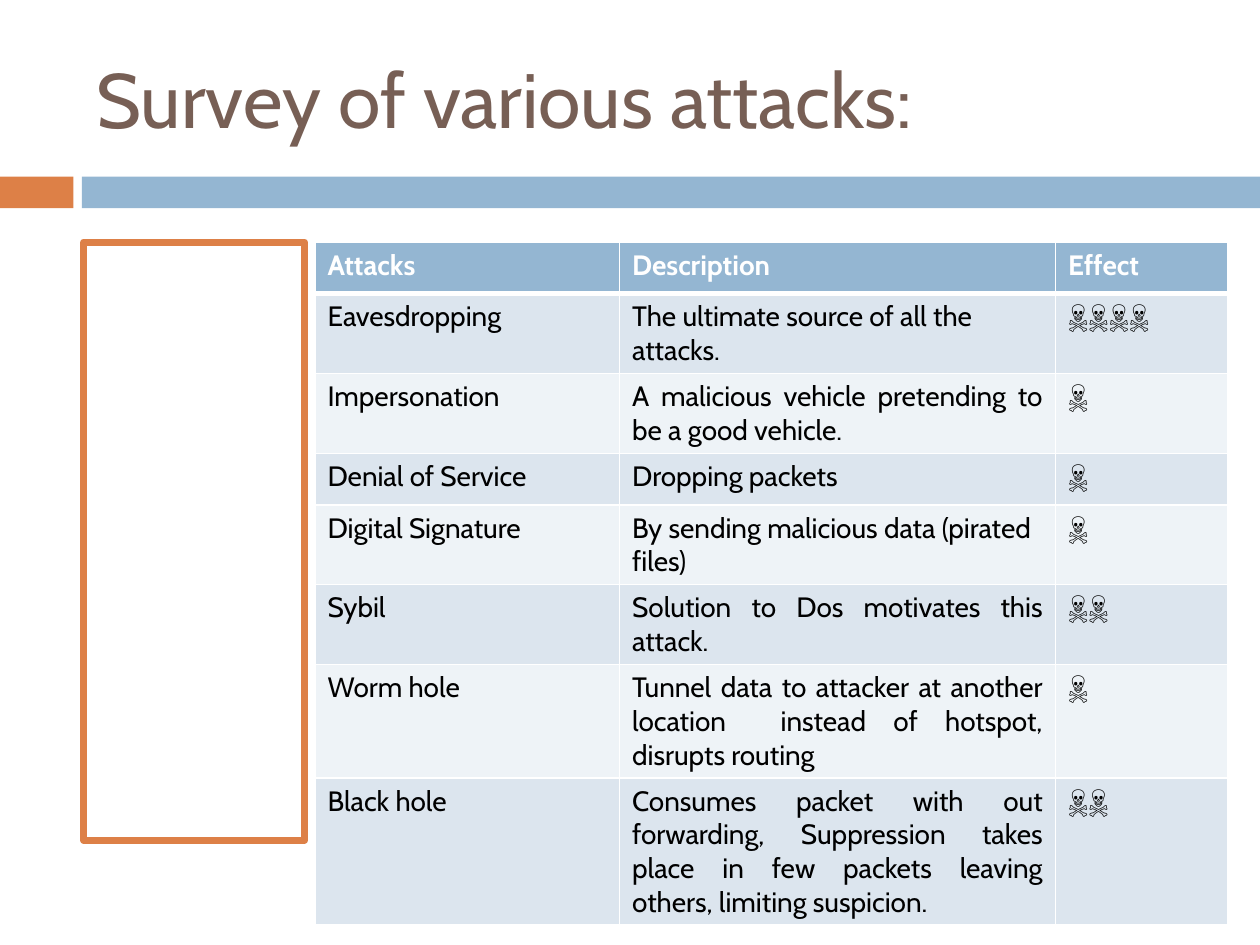
from dataclasses import dataclass

from lxml.etree import SubElement
from pptx import Presentation
from pptx.dml.color import RGBColor
from pptx.enum.shapes import MSO_SHAPE
from pptx.enum.text import MSO_ANCHOR, PP_ALIGN
from pptx.oxml.ns import qn
from pptx.util import Cm, Pt

COLORS = {
    "orange": "DD8047",
    "blue": "94B6D2",
    "brown": "775F55",
    "white": "FFFFFF",
    "black": "000000",
    "band_dark": "DCE5EE",
    "band_light": "EEF3F7",
}
FORMATS = {
    "title": {"name": "Cabin", "size": Pt(44), "bold": False},
    "header": {"name": "Cabin", "size": Pt(16), "bold": True},
    "body": {"name": "Cabin", "size": Pt(16), "bold": False},
}
COL_WIDTHS = (6.14, 8.79, 3.48)
ROW_HEIGHT = 1.04


@dataclass
class Box:
    left: float
    top: float
    width: float
    height: float
    fill: str
    line: str | None = None


@dataclass
class Attack:
    name: str
    description: str
    effect: int
    justified: bool = False


BOXES = [
    Box(0, 3.56, 1.48, 0.64, "orange"),
    Box(1.65, 3.56, 23.75, 0.64, "blue"),
    Box(1.69, 4.88, 4.45, 12.06, "white", "orange"),
]
ATTACKS = [
    Attack("Eavesdropping", "The ultimate source of all the attacks.", 4),
    Attack("Impersonation", "A malicious vehicle pretending to be a good vehicle.", 1, True),
    Attack("Denial of Service", "Dropping packets", 1),
    Attack("Digital Signature", "By sending malicious data (pirated files)", 1),
    Attack("Sybil", "Solution to Dos motivates this attack.", 2, True),
    Attack("Worm hole", "Tunnel data to attacker at another location  instead of hotspot, "
           "disrupts routing", 1, True),
    Attack("Black hole", "Consumes packet with out forwarding, Suppression takes place in few "
           "packets leaving others, limiting suspicion.", 2, True),
]


def rgb(color: str) -> RGBColor:
    return RGBColor.from_string(COLORS[color])


def write(tf, text: str, style: str, color: str, align=PP_ALIGN.LEFT) -> None:
    p = tf.paragraphs[0]
    p.alignment = align
    r = p.add_run()
    r.text = text
    for key, value in FORMATS[style].items():
        setattr(r.font, key, value)
    r.font.color.rgb = rgb(color)


def draw_box(s, box: Box) -> None:
    sp = s.shapes.add_shape(MSO_SHAPE.RECTANGLE, Cm(box.left), Cm(box.top),
                            Cm(box.width), Cm(box.height))
    sp.shadow.inherit = False
    sp.fill.solid()
    sp.fill.fore_color.rgb = rgb(box.fill)
    if box.line:
        sp.line.color.rgb = rgb(box.line)
        sp.line.width = Pt(4)
    else:
        sp.line.fill.background()


def draw_title(s, text: str) -> None:
    sp = s.shapes.add_textbox(Cm(1.69), Cm(0.76), Cm(22.44), Cm(2.41))
    tf = sp.text_frame
    tf.word_wrap = True
    tf.vertical_anchor = MSO_ANCHOR.MIDDLE
    write(tf, text, "title", "brown")


def format_cell(cell, fill: str, top: float, bottom: float) -> None:
    tcPr = cell._tc.get_or_add_tcPr()
    for side, width in {"L": 1, "R": 1, "T": top, "B": bottom}.items():
        ln = SubElement(tcPr, qn(f"a:ln{side}"), w=str(Pt(width)))
        solid = SubElement(ln, qn("a:solidFill"))
        SubElement(solid, qn("a:srgbClr"), val=COLORS["white"])
    cell.fill.solid()
    cell.fill.fore_color.rgb = rgb(fill)


def draw_table(s, headers: tuple[str, ...], attacks: list[Attack]) -> None:
    count = len(attacks) + 1
    table = s.shapes.add_table(count, len(headers), Cm(6.35), Cm(4.88),
                               Cm(sum(COL_WIDTHS)), Cm(ROW_HEIGHT * count)).table
    for column, width in zip(table.columns, COL_WIDTHS):
        column.width = Cm(width)
    for row in table.rows:
        row.height = Cm(ROW_HEIGHT)
    for j, header in enumerate(headers):
        format_cell(table.cell(0, j), "blue", 1, 3)
        write(table.cell(0, j).text_frame, header, "header", "white")
    for i, attack in enumerate(attacks, 1):
        fill = "band_dark" if i % 2 else "band_light"
        texts = (attack.name, attack.description, "☠" * attack.effect)
        for j, text in enumerate(texts):
            justify = attack.justified and j == 1
            format_cell(table.cell(i, j), fill, 3 if i == 1 else 1, 1)
            write(table.cell(i, j).text_frame, text, "body", "black",
                  PP_ALIGN.JUSTIFY if justify else PP_ALIGN.LEFT)


def main() -> None:
    prs = Presentation()
    prs.slide_width, prs.slide_height = Cm(25.4), Cm(19.05)
    s = prs.slides.add_slide(prs.slide_layouts[6])
    for box in BOXES:
        draw_box(s, box)
    draw_title(s, "Survey of various attacks:")
    draw_table(s, ("Attacks", "Description", "Effect"), ATTACKS)
    prs.save("out.pptx")


if __name__ == "__main__":
    main()
